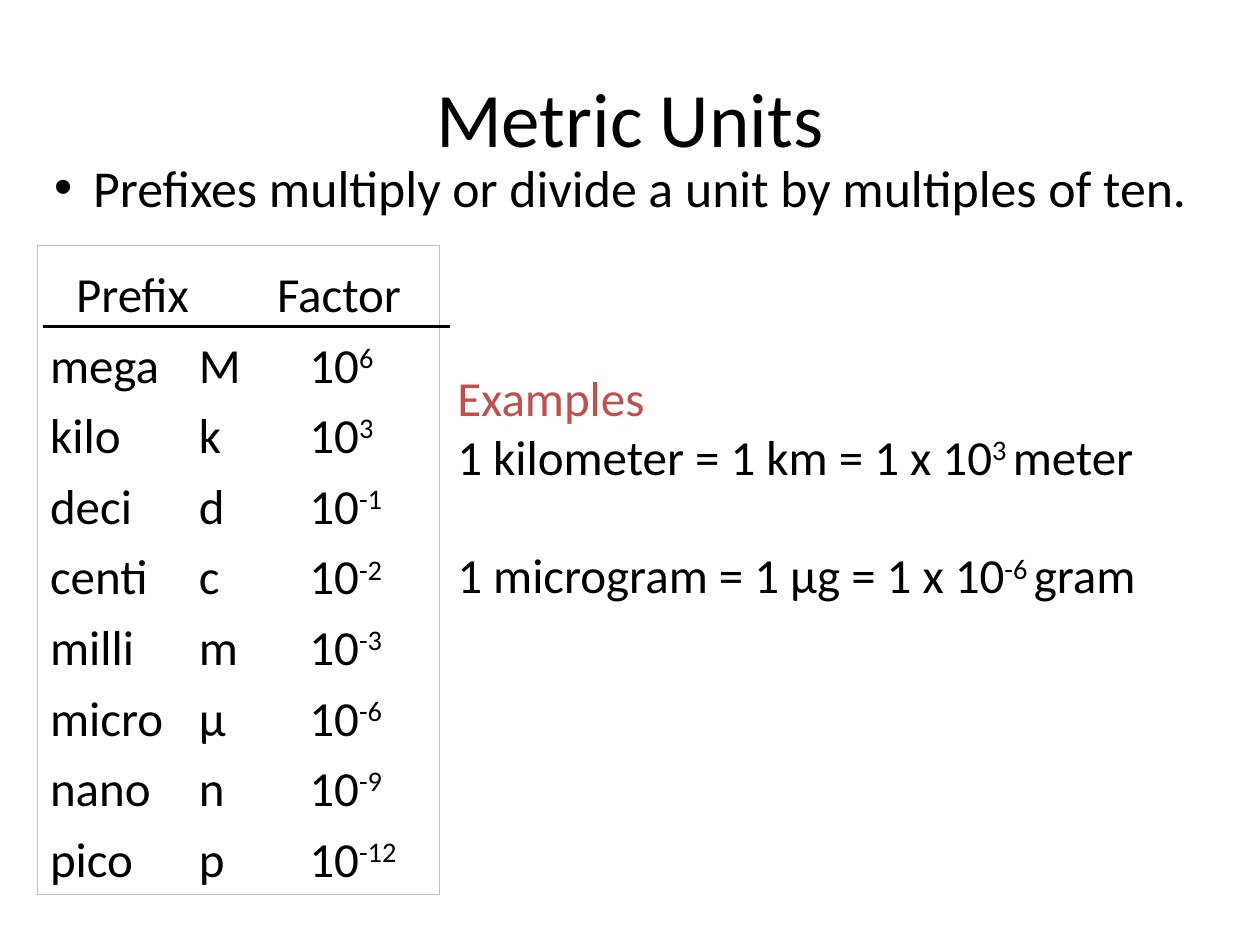
from lxml import etree
from pptx import Presentation
from pptx import util as u
from pptx.dml.color import RGBColor
from pptx.enum import shapes, text
from pptx.oxml.ns import qn

BLACK, WHITE, SILVER, RED = "000000", "FFFFFF", "C0C0C0", "C0504D"
TABS = (3.0, 5.23)
HEADER_TABS = (4.05,)
PREFIXES = [
    ("mega", "M", 6), ("kilo", "k", 3), ("deci", "d", -1), ("centi", "c", -2),
    ("milli", "m", -3), ("micro", "μ", -6), ("nano", "n", -9), ("pico", "p", -12),
]


def rgb(value):
    return RGBColor.from_string(value)


class Deck:
    font = "Calibri"
    size = 28

    def __init__(self, width, height):
        self.prs = Presentation()
        self.prs.slide_width, self.prs.slide_height = u.Cm(width), u.Cm(height)
        self.s = self.prs.slides.add_slide(self.prs.slide_layouts[5])

    def add_text(self, p, content, color=BLACK, size=None):
        """Fill a paragraph; every second part between ^ marks is superscript."""
        p.alignment = p.alignment or text.PP_ALIGN.LEFT
        for i, part in enumerate(content.split("^")):
            if not part:
                continue
            r = p.add_run()
            r.text = part
            r.font.name, r.font.size = self.font, u.Pt(size or self.size)
            r.font.color.rgb = rgb(color)
            if i % 2:
                r.font._element.set("baseline", "30000")

    def title(self, content, box):
        sp = self.s.shapes.title
        sp.left, sp.top, sp.width, sp.height = map(u.Cm, box)
        sp.text_frame.vertical_anchor = text.MSO_ANCHOR.MIDDLE
        p = sp.text_frame.paragraphs[0]
        p.alignment = text.PP_ALIGN.CENTER
        self.add_text(p, content, size=44)

    def text_box(self, box):
        tf = self.s.shapes.add_textbox(*map(u.Cm, box)).text_frame
        tf.word_wrap = True
        return tf

    def panel(self, box):
        sp = self.s.shapes.add_shape(shapes.MSO_SHAPE.RECTANGLE, *map(u.Cm, box))
        sp.shadow.inherit = False
        sp.fill.solid()
        sp.fill.fore_color.rgb = rgb(WHITE)
        sp.line.color.rgb = rgb(SILVER)
        sp.line.width = u.Pt(0.75)
        tf = sp.text_frame
        tf.word_wrap = True
        tf.vertical_anchor = text.MSO_ANCHOR.TOP
        return tf

    def tabbed_row(self, p, content, stops):
        p.line_spacing = 1.2
        self.add_text(p, content)
        tabs = etree.SubElement(p._p.get_or_add_pPr(), qn("a:tabLst"))
        for stop in stops:
            etree.SubElement(tabs, qn("a:tab"), pos=str(u.Cm(stop)), algn="l")

    def bullet(self, p, content, size, indent):
        self.add_text(p, content, size=size)
        pPr = p._p.get_or_add_pPr()
        pPr.set("marL", str(u.Cm(indent)))
        pPr.set("indent", str(-u.Cm(indent)))
        etree.SubElement(pPr, qn("a:buFont"), typeface="Arial")
        etree.SubElement(pPr, qn("a:buChar"), char="•")

    def line(self, x1, y1, x2, y2):
        c = self.s.shapes.add_connector(
            shapes.MSO_CONNECTOR.STRAIGHT, *map(u.Cm, (x1, y1, x2, y2)))
        c.line.color.rgb = rgb(BLACK)
        c.line.width = u.Pt(2)
        etree.SubElement(c._element.spPr, qn("a:effectLst"))


def main():
    deck = Deck(25.4, 19.05)
    deck.title("Metric Units", (1.27, 0.76, 22.86, 3.18))

    tf = deck.panel((0.76, 4.95, 8.1, 13.08))
    deck.tabbed_row(tf.paragraphs[0], "Prefix\tFactor", HEADER_TABS)
    for name, symbol, power in PREFIXES:
        deck.tabbed_row(tf.add_paragraph(), f"{name}\t{symbol}\t10^{power}", TABS)
    deck.line(0.86, 6.58, 9.07, 6.58)

    tf = deck.text_box((0.84, 3.02, 24, 1.6))
    deck.bullet(tf.paragraphs[0],
                "Prefixes multiply or divide a unit by multiples of ten.", 29.6, 0.79)

    tf = deck.text_box((8.97, 7.29, 16.33, 5))
    deck.add_text(tf.paragraphs[0], "Examples", RED)
    deck.add_text(tf.add_paragraph(), "1 kilometer = 1 km = 1 x 10^3 ^meter")
    p = tf.add_paragraph()
    p.space_before = u.Pt(34)
    deck.add_text(p, "1 microgram = 1 μg = 1 x 10^-6 ^gram")

    deck.prs.save("out.pptx")


if __name__ == "__main__":
    main()
